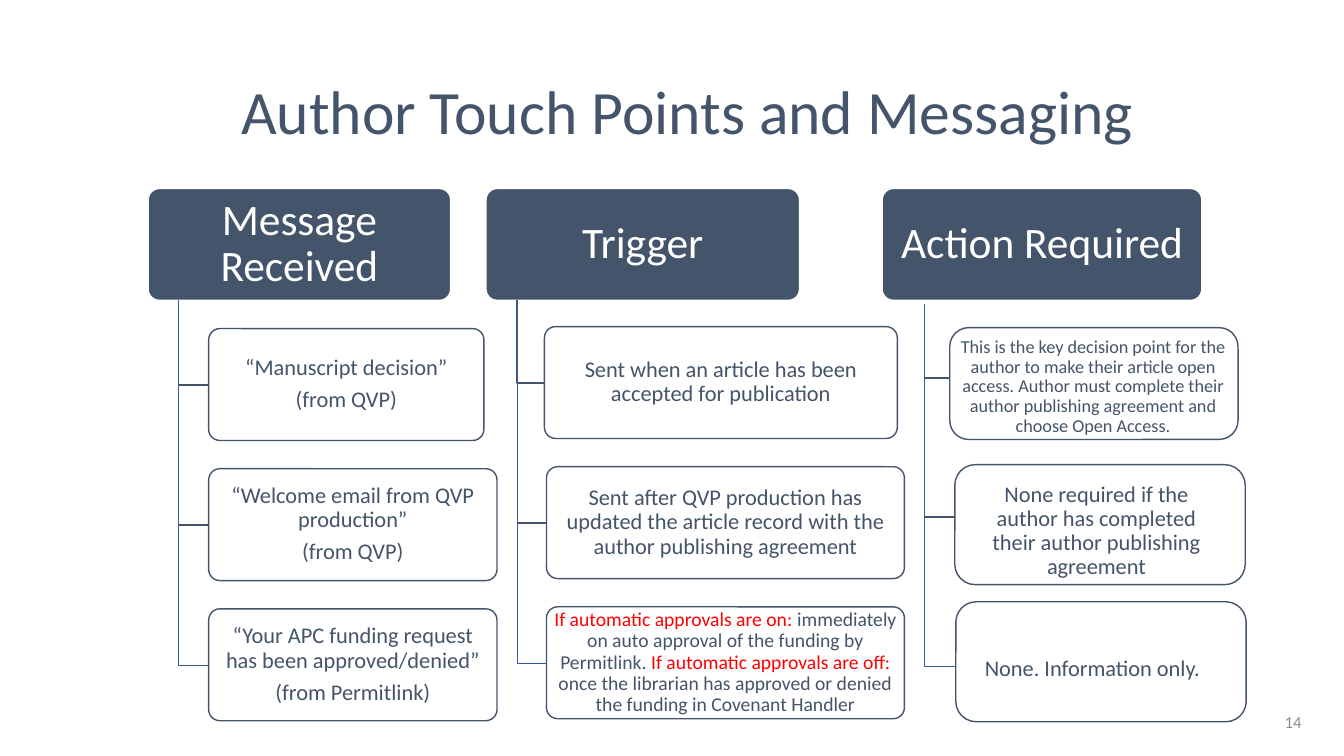
from pptx import Presentation, util as u
from pptx.dml.color import RGBColor
from pptx.enum import shapes, text
from pptx.oxml.ns import qn
from lxml import etree

SLATE = RGBColor(0x44, 0x54, 0x6A)
BLUE = RGBColor(0x36, 0x5B, 0x9D)
RED = RGBColor(0xFF, 0, 0)
GREY = RGBColor(0x8C, 0x8C, 0x8C)
WHITE = RGBColor(0xFF, 0xFF, 0xFF)
FONT = "Calibri"

TITLE = "Author Touch Points and Messaging"
PAGE = "14"
HEADER_TOP, HEADER_HEIGHT = 1.87, 1.11
NARROW = (0.03, 0.02, 0.03, 0.02)
HEADER_INSETS = (0.06, 0.04, 0.06, 0.04)

COLUMNS = [
    dict(header="Message Received", left=1.47, width=3.0, spine=1.77, start=2.98,
         top=3.26, pitch=1.39, boxes=[
             (2.07, 2.73, 1.11, 0.56, 0.1, NARROW, 16,
              [[("“Manuscript decision”", SLATE)], [("(from QVP)", SLATE)]]),
             (2.07, 2.86, 1.11, 0.56, 0.1, NARROW, 16,
              [[("“Welcome email from QVP production”", SLATE)], [("(from QVP)", SLATE)]]),
             (2.07, 2.86, 1.11, 0.56, 0.1, NARROW, 16,
              [[("“Your APC funding request has been approved/denied”", SLATE)],
               [("(from Permitlink)", SLATE)]]),
         ]),
    dict(header="Trigger", left=4.82, width=3.11, spine=5.13, start=2.98,
         top=3.24, pitch=1.39, boxes=[
             (5.4, 3.5, 1.11, 0.56, 0.1, NARROW, 16,
              [[("Sent when an article has been accepted for publication", SLATE)]]),
             (5.42, 3.55, 1.11, 0.56, 0.1, NARROW, 16,
              [[("Sent after QVP production has updated the article record with the "
                 "author publishing agreement", SLATE)]]),
             (5.42, 3.55, 1.11, 0.56, 0.1, NARROW, 14,
              [[("If automatic approvals are on: ", RED),
                ("immediately on auto approval of the funding by Permitlink. ", SLATE),
                ("If automatic approvals are off: ", RED),
                ("once the librarian has approved or denied the funding in "
                 "Covenant Handler", SLATE)]]),
         ]),
    dict(header="Action Required", left=8.75, width=3.17, spine=9.17, start=3.02,
         top=3.25, pitch=1.36, boxes=[
             (9.42, 2.86, 1.11, 0.5, 0.17, (0, 0.07, 0.02, 0), 13,
              [[("This is the key decision point for the author to make their article "
                 "open access. Author must complete their author publishing agreement "
                 "and choose Open Access.", SLATE)]]),
             (9.47, 2.88, 1.19, 0.52, 0.17, (0.16, 0.13, 0.23, 0), 16,
              [[("None required if the author has completed their author publishing "
                 "agreement", SLATE)]]),
             (9.48, 2.88, 1.19, 0.64, 0.17, (0.11, 0.15, 0.28, 0), 16,
              [[("None. Information only.", SLATE)]]),
         ]),
]


def write(frame, paragraphs, size, insets, align=text.PP_ALIGN.CENTER, spacing=0.9):
    frame.word_wrap = True
    frame.auto_size = text.MSO_AUTO_SIZE.NONE
    frame.vertical_anchor = text.MSO_ANCHOR.MIDDLE
    (frame.margin_left, frame.margin_top,
     frame.margin_right, frame.margin_bottom) = map(u.Inches, insets)
    for index, runs in enumerate(paragraphs):
        paragraph = frame.add_paragraph() if index else frame.paragraphs[0]
        paragraph.alignment = align
        paragraph.line_spacing = spacing
        if index:
            paragraph.space_before = u.Pt(5.6)
        paragraph.font.size = u.Pt(size)
        paragraph.font.name = FONT
        for words, colour in runs:
            run = paragraph.add_run()
            run.text = words
            run.font.color.rgb = colour


def add_box(slide, place, corner, fill, line, opacity=100):
    shape = slide.shapes.add_shape(shapes.MSO_SHAPE.ROUNDED_RECTANGLE, *map(u.Inches, place))
    shape.adjustments[0] = corner
    shape.shadow.inherit = False
    shape.fill.solid()
    shape.fill.fore_color.rgb = fill
    if opacity < 100:
        colour = shape.element.spPr.find(qn("a:solidFill"))[0]
        etree.SubElement(colour, qn("a:alpha")).set("val", str(opacity * 1000))
    shape.line.color.rgb = line
    shape.line.width = u.Pt(1)
    return shape


def add_branch(slide, spine, start, end, middle, colour):
    builder = slide.shapes.build_freeform(u.Inches(spine), u.Inches(start))
    builder.add_line_segments([(u.Inches(spine), u.Inches(middle)),
                               (u.Inches(end), u.Inches(middle))], close=False)
    branch = builder.convert_to_shape()
    branch.shadow.inherit = False
    branch.fill.background()
    branch.line.color.rgb = colour
    branch.line.width = u.Pt(1)


def add_column(slide, column):
    header = add_box(slide, (column["left"], HEADER_TOP, column["width"], HEADER_HEIGHT),
                     0.1, SLATE, WHITE)
    write(header.text_frame, [[(column["header"], WHITE)]], 31, HEADER_INSETS)
    last = len(column["boxes"]) - 1
    for row, box in enumerate(column["boxes"]):
        left, width, height, drop, corner, insets, size, paragraphs = box
        top = column["top"] + row * column["pitch"]
        add_branch(slide, column["spine"], column["start"], left, top + drop,
                   BLUE if row == last else SLATE)
        shape = add_box(slide, (left, top, width, height), corner, WHITE, SLATE, 90)
        write(shape.text_frame, paragraphs, size, insets)


def main():
    presentation = Presentation()
    presentation.slide_width = u.Inches(13.33)
    presentation.slide_height = u.Inches(7.5)
    slide = presentation.slides.add_slide(presentation.slide_layouts[5])

    title = slide.shapes.title
    title.left, title.top, title.width, title.height = map(u.Inches, (0.77, 0.89, 12.1, 0.49))
    write(title.text_frame, [[(TITLE, SLATE)]], 44, (0.1, 0.05, 0.1, 0.05))

    for column in COLUMNS:
        add_column(slide, column)

    number = slide.shapes.add_textbox(*map(u.Inches, (10.01, 6.96, 3, 0.4)))
    write(number.text_frame, [[(PAGE, GREY)]], 12, (0.1, 0.05, 0.1, 0.05),
          text.PP_ALIGN.RIGHT, 1.0)

    presentation.save("out.pptx")


if __name__ == "__main__":
    main()
